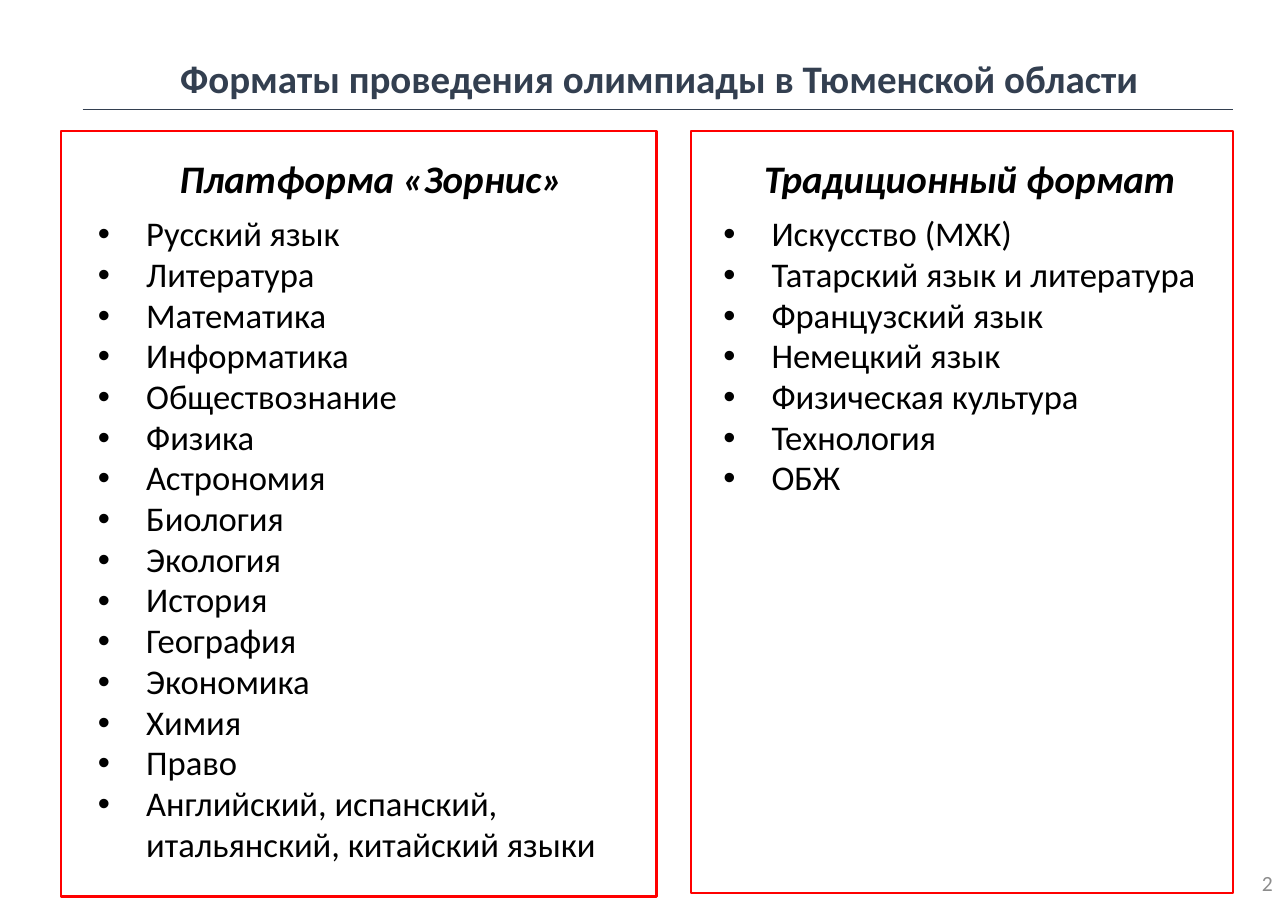
from lxml.etree import SubElement
from pptx import Presentation
from pptx.dml.color import RGBColor
from pptx.enum.shapes import MSO_CONNECTOR, MSO_SHAPE
from pptx.enum.text import MSO_ANCHOR, PP_ALIGN
from pptx.oxml.ns import qn
from pptx.util import Emu, Pt

PX = 9144  # one px is a hundredth of an inch
FONT = "Calibri"
COLORS = {
    "white": "FFFFFF",
    "frame": "FF0000",
    "title": "333F50",
    "text": "000000",
    "number": "8C8C8C",
}


class SlideBuilder:
    def __init__(self, presentation):
        # Layout 5 is title only
        self.slide = presentation.slides.add_slide(presentation.slide_layouts[5])
        self.shapes = self.slide.shapes

    def px(self, *lengths):
        return [Emu(length * PX) for length in lengths]

    def color(self, name):
        return RGBColor.from_string(COLORS[name])

    def format_runs(self, paragraph, size, color, bold=False, italic=False):
        for run in paragraph.runs:
            font = run.font
            font.name, font.size = FONT, Pt(size)
            font.bold, font.italic = bold, italic
            font.color.rgb = self.color(color)

    def set_margins(self, text_frame, horizontal, vertical):
        text_frame.margin_left, text_frame.margin_right = self.px(horizontal, horizontal)
        text_frame.margin_top, text_frame.margin_bottom = self.px(vertical, vertical)

    def title(self, text, *box):
        title = self.shapes.title
        title.left, title.top, title.width, title.height = self.px(*box)
        text_frame = title.text_frame
        text_frame.text = text
        text_frame.vertical_anchor = MSO_ANCHOR.MIDDLE
        self.set_margins(text_frame, 0, 0)
        paragraph = text_frame.paragraphs[0]
        paragraph.alignment = PP_ALIGN.CENTER
        self.format_runs(paragraph, 18, "title", bold=True)

    def rule(self, left, right, top):
        line = self.shapes.add_connector(
            MSO_CONNECTOR.STRAIGHT, *self.px(left, top, right, top))
        line.line.color.rgb = self.color("title")
        line.line.width = Pt(0.5)
        SubElement(line.element.spPr, qn("a:effectLst"))

    def frame(self, *box):
        frame = self.shapes.add_shape(MSO_SHAPE.RECTANGLE, *self.px(*box))
        frame.shadow.inherit = False
        frame.fill.solid()
        frame.fill.fore_color.rgb = self.color("white")
        frame.line.color.rgb = self.color("frame")
        frame.line.width = Pt(1)

    def text_box(self, text, *box):
        text_frame = self.shapes.add_textbox(*self.px(*box)).text_frame
        text_frame.word_wrap = True
        text_frame.text = text
        return text_frame

    def add_bullet(self, paragraph):
        indent = 31 * PX
        properties = paragraph._p.get_or_add_pPr()
        properties.set("marL", str(indent))
        properties.set("indent", str(-indent))
        SubElement(properties, qn("a:buFont"), typeface="Arial")
        SubElement(properties, qn("a:buChar"), char="•")

    def subject_list(self, heading, subjects, *box):
        text_frame = self.text_box("\n".join([heading, *subjects]), *box)
        self.set_margins(text_frame, 10, 6)
        heading_paragraph, *subject_paragraphs = text_frame.paragraphs
        heading_paragraph.alignment = PP_ALIGN.CENTER
        heading_paragraph.space_after = Pt(6)
        self.format_runs(heading_paragraph, 18, "text", bold=True, italic=True)
        for paragraph in subject_paragraphs:
            paragraph.line_spacing = 0.98
            self.add_bullet(paragraph)
            self.format_runs(paragraph, 16, "text")

    def page_number(self, number, *box):
        text_frame = self.text_box(number, *box)
        text_frame.vertical_anchor = MSO_ANCHOR.MIDDLE
        paragraph = text_frame.paragraphs[0]
        paragraph.alignment = PP_ALIGN.RIGHT
        self.format_runs(paragraph, 10, "number")


PLATFORM_SUBJECTS = [
    "Русский язык", "Литература", "Математика", "Информатика", "Обществознание",
    "Физика", "Астрономия", "Биология", "Экология", "История", "География",
    "Экономика", "Химия", "Право",
    "Английский, испанский, итальянский, китайский языки",
]
TRADITIONAL_SUBJECTS = [
    "Искусство (МХК)", "Татарский язык и литература", "Французский язык",
    "Немецкий язык", "Физическая культура", "Технология", "ОБЖ",
]


def main():
    presentation = Presentation()
    presentation.slide_width, presentation.slide_height = Emu(826 * PX), Emu(583 * PX)
    builder = SlideBuilder(presentation)

    # Title and rule
    builder.title("Форматы проведения олимпиады в Тюменской области", 56, 35, 734, 30)
    builder.rule(53, 791, 70)

    # Online platform
    builder.frame(39, 84, 382, 491)
    builder.subject_list("Платформа «Зорнис»", PLATFORM_SUBJECTS, 53, 93, 370, 480)

    # Traditional format
    builder.frame(443, 84, 348, 489)
    builder.subject_list("Традиционный формат", TRADITIONAL_SUBJECTS, 454, 93, 336, 264)

    # Page number
    builder.page_number("2", 779, 551, 47, 31)

    presentation.save("out.pptx")


if __name__ == "__main__":
    main()
